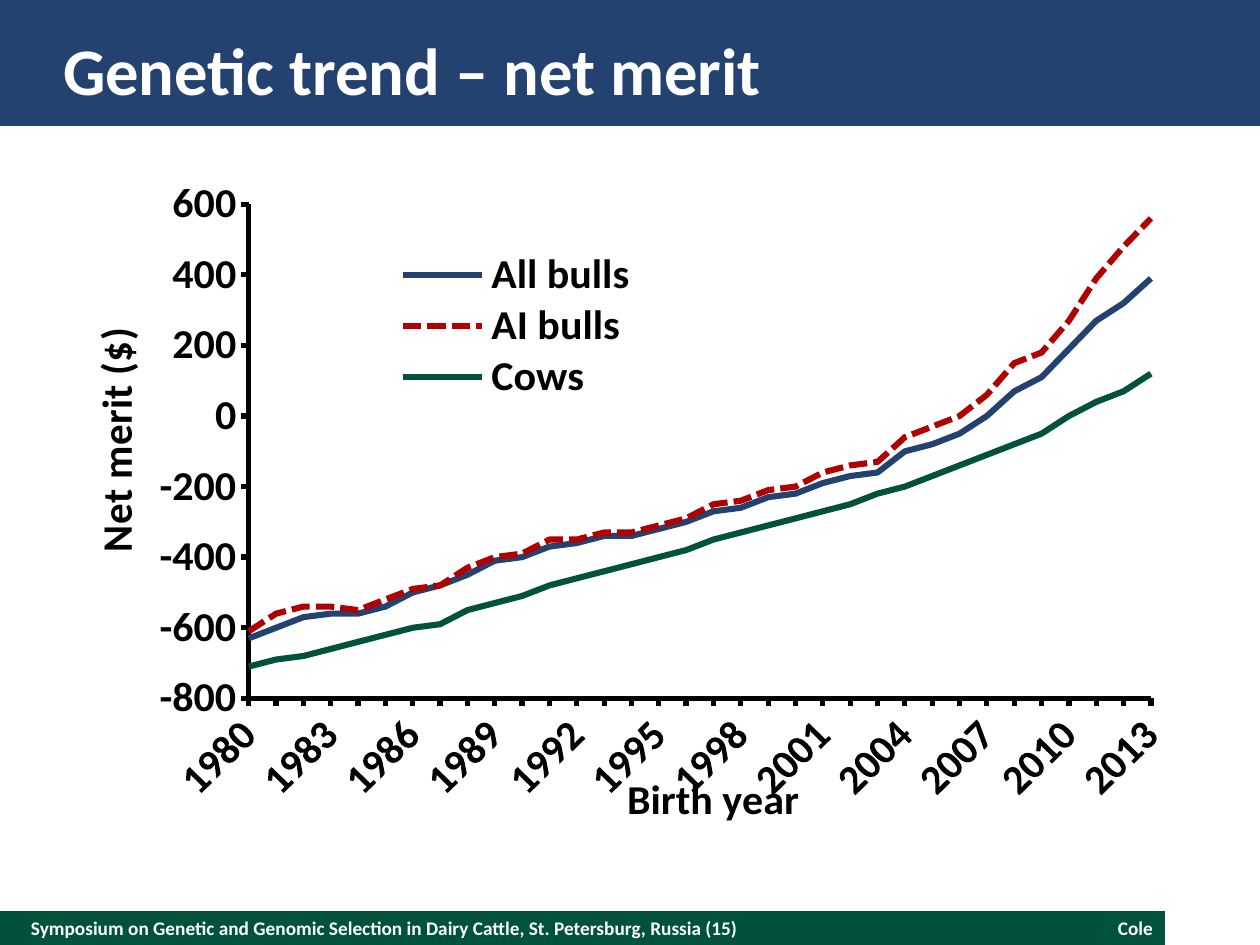
from lxml.etree import SubElement
from pptx import Presentation
from pptx.chart.data import CategoryChartData
from pptx.dml.color import RGBColor
from pptx.enum.chart import XL_AXIS_CROSSES, XL_CHART_TYPE, XL_LEGEND_POSITION, XL_TICK_LABEL_POSITION, XL_TICK_MARK
from pptx.enum.dml import MSO_LINE
from pptx.enum.shapes import MSO_SHAPE
from pptx.enum.text import MSO_ANCHOR, PP_ALIGN
from pptx.oxml.ns import qn
from pptx.util import Pt

PX = 914400 / 126
FONT = "Calibri"
COLORS = {"blue": "244270", "red": "B00000", "green": "00523C", "white": "FFFFFF", "black": "000000"}
RGB = {name: RGBColor.from_string(value) for name, value in COLORS.items()}


def style(font, size, color):
    font.name, font.size, font.bold = FONT, Pt(size), True
    font.color.rgb = RGB[color]


def place(parent, index, inner=False, **box):
    """Give a chart part a manual layout, as fractions of the chart."""
    for old in parent.findall(qn("c:layout")):
        parent.remove(old)
    layout = parent.makeelement(qn("c:layout"))
    parent.insert(index, layout)
    manual = SubElement(layout, qn("c:manualLayout"))
    if inner:
        SubElement(manual, qn("c:layoutTarget")).set("val", "inner")
    for key in ("xMode", "yMode"):
        SubElement(manual, qn("c:" + key)).set("val", "edge")
    for key, value in box.items():
        SubElement(manual, qn("c:" + key)).set("val", str(value))


prs = Presentation()
prs.slide_width, prs.slide_height = round(1260 * PX), round(945 * PX)
s = prs.slides.add_slide(prs.slide_layouts[5])

# Title and footer bands
for top, width, height, color in ((911, 1165, 34, "green"), (0, 1260, 126, "blue")):
    band = s.shapes.add_shape(MSO_SHAPE.RECTANGLE, 0, round(top * PX), round(width * PX), round(height * PX))
    band.shadow.inherit = False
    band.fill.solid()
    band.fill.fore_color.rgb = RGB[color]
    band.line.fill.background()

# Title, brought in front of its band
title = s.shapes.title
s.shapes._spTree.append(title._element)
title.left, title.top, title.width, title.height = [round(v * PX) for v in (63, 25, 1134, 88)]
tf = title.text_frame
tf.text = "Genetic trend – net merit"
tf.vertical_anchor = MSO_ANCHOR.MIDDLE
tf.margin_left = tf.margin_right = tf.margin_top = tf.margin_bottom = 0
tf.paragraphs[0].alignment = PP_ALIGN.LEFT
style(tf.paragraphs[0].runs[0].font, 38, "white")

# Footer texts
footers = (
    (31, 819, PP_ALIGN.LEFT, "Symposium on Genetic and Genomic Selection in Dairy Cattle, St. Petersburg, Russia (15)"),
    (914, 239, PP_ALIGN.RIGHT, "Cole"),
)
for left, width, align, text in footers:
    tf = s.shapes.add_textbox(round(left * PX), round(911 * PX), round(width * PX), round(34 * PX)).text_frame
    tf.word_wrap = True
    tf.margin_left = tf.margin_right = tf.margin_top = tf.margin_bottom = 0
    tf.vertical_anchor = MSO_ANCHOR.MIDDLE
    tf.text = text
    p = tf.paragraphs[0]
    p.alignment = align
    style(p.runs[0].font, 11, "white")

# Net merit by birth year
series = (
    ("All bulls", "blue", None,
     (-630, -600, -570, -560, -560, -540, -500, -480, -450, -410, -400, -370, -360, -340, -340, -320, -300,
      -270, -260, -230, -220, -190, -170, -160, -100, -80, -50, 0, 70, 110, 190, 270, 320, 390)),
    ("AI bulls", "red", MSO_LINE.SQUARE_DOT,
     (-610, -560, -540, -540, -550, -520, -490, -480, -430, -400, -390, -350, -350, -330, -330, -310, -290,
      -250, -240, -210, -200, -160, -140, -130, -60, -30, 0, 60, 150, 180, 270, 390, 480, 560)),
    ("Cows", "green", None,
     (-710, -690, -680, -660, -640, -620, -600, -590, -550, -530, -510, -480, -460, -440, -420, -400, -380,
      -350, -330, -310, -290, -270, -250, -220, -200, -170, -140, -110, -80, -50, 0, 40, 70, 120)),
)
data = CategoryChartData()
data.categories = [str(year) for year in range(1980, 2014)]
for name, color, dash, values in series:
    data.add_series(name, values)
frame = s.shapes.add_chart(XL_CHART_TYPE.LINE, *[round(v * PX) for v in (57, 178, 1148, 660)], data)
chart = frame.chart
style(chart.font, 24, "black")
chart.has_title = False
for line, (name, color, dash, values) in zip(chart.plots[0].series, series):
    line.smooth = False
    line.format.line.color.rgb = RGB[color]
    line.format.line.width = Pt(3.5)
    if dash:
        line.format.line.dash_style = dash
place(chart._chartSpace.chart.plotArea, 0, inner=True, x=0.167, y=0.041, w=0.786, h=0.768)

# Axes
cat_axis, val_axis = chart.category_axis, chart.value_axis
for axis, text, x, y in ((cat_axis, "Birth year", 0.49, 0.91), (val_axis, "Net merit ($)", 0.02, 0.23)):
    axis.has_major_gridlines = False
    axis.major_tick_mark = XL_TICK_MARK.OUTSIDE
    axis.minor_tick_mark = XL_TICK_MARK.NONE
    axis.tick_label_position = XL_TICK_LABEL_POSITION.LOW
    axis.format.line.color.rgb = RGB["black"]
    axis.format.line.width = Pt(3)
    style(axis.tick_labels.font, 24, "black")
    tf = axis.axis_title.text_frame
    tf.text = text
    style(tf.paragraphs[0].runs[0].font, 24, "black")
    place(axis.axis_title._element, 1, x=x, y=y)
val_axis.axis_title.text_frame._txBody.bodyPr.set("rot", "-5400000")
val_axis.minimum_scale, val_axis.maximum_scale, val_axis.major_unit = -800, 600, 200
val_axis.crosses = XL_AXIS_CROSSES.MINIMUM

# Lines start on the value axis
major_unit = val_axis._element.find(qn("c:majorUnit"))
for old in val_axis._element.findall(qn("c:crossBetween")):
    val_axis._element.remove(old)
major_unit.addprevious(major_unit.makeelement(qn("c:crossBetween"), {"val": "midCat"}))

# Slanted year labels, every third year
cat_axis._element.find(qn("c:txPr")).find(qn("a:bodyPr")).set("rot", "-2700000")
no_multi = cat_axis._element.find(qn("c:noMultiLvlLbl"))
for key, step in (("tickLblSkip", 3), ("tickMarkSkip", 1)):
    skip = no_multi.makeelement(qn("c:" + key), {"val": str(step)})
    no_multi.addprevious(skip)

# Legend inside the plot
chart.has_legend = True
chart.legend.position = XL_LEGEND_POSITION.RIGHT
chart.legend.include_in_layout = False
style(chart.legend.font, 24, "black")
place(chart.legend._element, 1, x=0.28, y=0.11, w=0.24, h=0.24)

prs.save("out.pptx")
